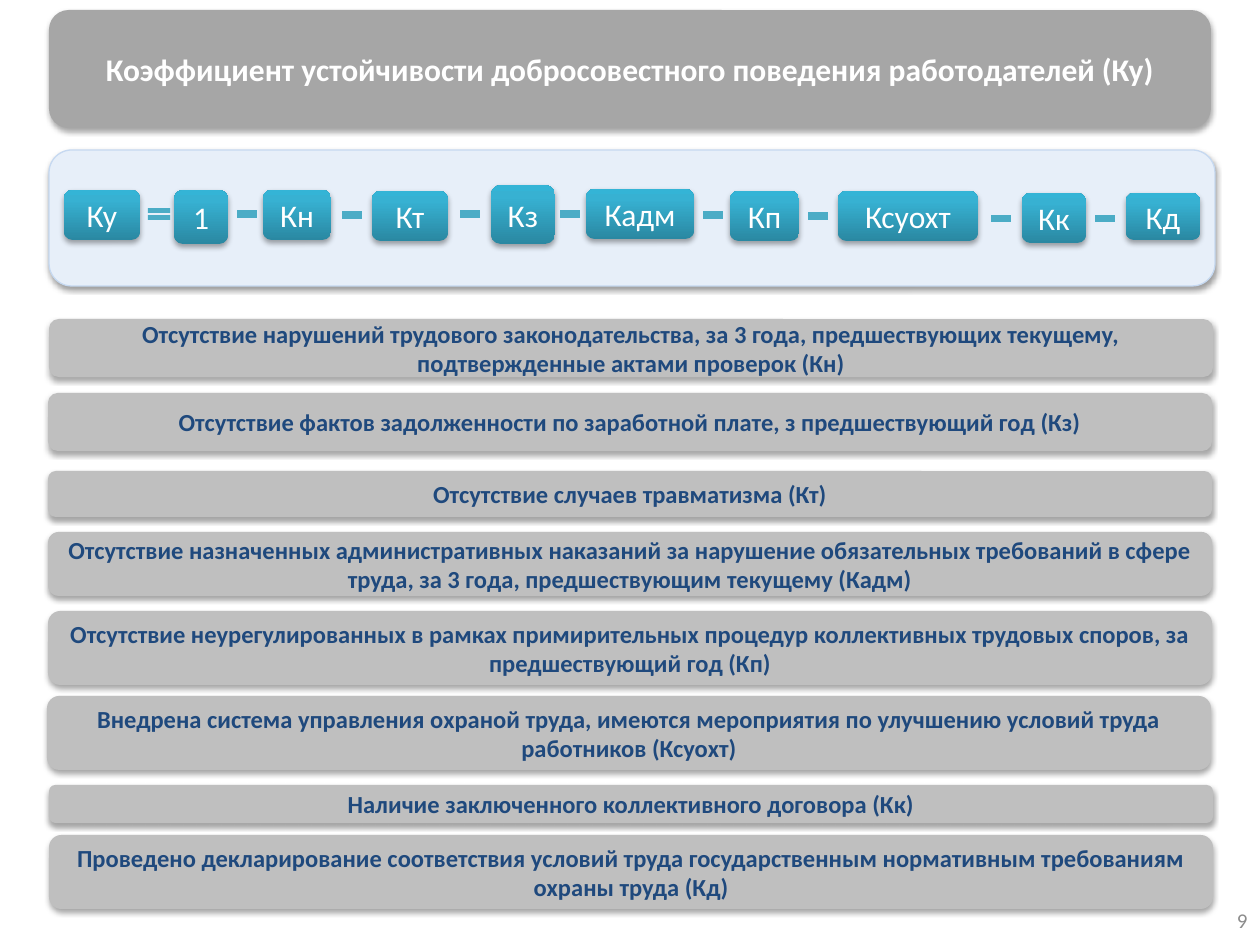
from copy import deepcopy

from lxml import etree
from pptx import Presentation
from pptx import util as u
from pptx.dml.color import RGBColor
from pptx.enum import shapes, text
from pptx.oxml import ns

PX = 914400 / 126
COLORS = {
    "title": "A6A6A6", "panel": "E7EFF9", "panel_line": "C6D9F1",
    "sign": "4BACC6", "bar": "BFBFBF", "bar_text": "1F497D",
    "white": "FFFFFF", "number": "8C8C8C", "shadow": "000000",
}
TILE_STOPS = [(0, "2A88A2"), (0.8, "37B1D2"), (1, "34B4D6")]
RGB = {name: RGBColor.from_string(value) for name, value in COLORS.items()}
KIND = shapes.MSO_SHAPE

prs = Presentation()
prs.slide_width, prs.slide_height = u.Inches(10), u.Inches(7.5)
s = prs.slides.add_slide(prs.slide_layouts[6])


def add_shape(kind, box, color, shadow=None):
    """Add a borderless shape; shadow is (opacity %, distance in EMU)."""
    sp = s.shapes.add_shape(kind, *(round(v * PX) for v in box))
    sp.shadow.inherit = False
    sp.fill.solid()
    sp.fill.fore_color.rgb = RGB[color]
    sp.line.fill.background()
    if shadow:
        opacity, distance = shadow
        effects = sp._element.spPr.find(ns.qn("a:effectLst"))
        outer = etree.SubElement(effects, ns.qn("a:outerShdw"), blurRad="40000",
                                 dist=str(distance), dir="5400000", rotWithShape="0")
        clr = etree.SubElement(outer, ns.qn("a:srgbClr"), val=COLORS["shadow"])
        etree.SubElement(clr, ns.qn("a:alpha"), val=str(opacity * 1000))
    return sp


def write(sp, words, align="CENTER", **font):
    tf = sp.text_frame
    tf.word_wrap = True
    tf.vertical_anchor = text.MSO_ANCHOR.MIDDLE
    p = tf.paragraphs[0]
    p.alignment = text.PP_ALIGN[align]
    r = p.add_run()
    r.text = words
    r.font.color.rgb = RGB[font.pop("color")]
    for name, value in {"name": "Calibri", **font}.items():
        setattr(r.font, name, value)


SHADOW = (35, 23000)

# Formula panel and title
panel = add_shape(KIND.ROUNDED_RECTANGLE, (49, 150, 1166, 136), "panel", (38, 20000))
panel.line.color.rgb = RGB["panel_line"]
panel.line.width = u.Pt(0.75)

title = add_shape(KIND.ROUNDED_RECTANGLE, (49, 10, 1162, 118), "title", SHADOW)
write(title, "Коэффициент устойчивости добросовестного поведения работодателей (Ку)",
      size=u.Pt(18), bold=True, color="white")

# Formula terms
terms = [
    ("Ку", 64, 190, 76, 50), ("1", 174, 190, 54, 54), ("Кн", 263, 190, 68, 50),
    ("Кт", 372, 191, 76, 50), ("Кз", 491, 185, 64, 59), ("Кадм", 586, 189, 108, 50),
    ("Кп", 730, 191, 69, 50), ("Ксуохт", 838, 191, 140, 50), ("Кк", 1022, 193, 64, 50),
    ("Кд", 1126, 193, 74, 47),
]
for words, *box in terms:
    tile = add_shape(KIND.ROUNDED_RECTANGLE, box, "sign", SHADOW)
    tile.fill.gradient()
    tile.fill.gradient_angle = 90
    stop_list = tile._element.spPr.find(".//" + ns.qn("a:gsLst"))
    stop_list.append(deepcopy(stop_list[-1]))
    for stop, (position, color) in zip(tile.fill.gradient_stops, TILE_STOPS):
        stop.position = position
        stop.color.rgb = RGBColor.from_string(color)
    write(tile, words, size=u.Pt(18), color="white")

# Signs between the terms
add_shape(KIND.MATH_EQUAL, (144, 204, 30, 20), "sign")
for x, y in [(233, 199), (338, 200), (456, 199), (556, 199),
             (699, 200), (804, 201), (987, 204), (1091, 204)]:
    add_shape(KIND.MATH_MINUS, (x, y, 28, 30), "sign")

# Criteria: left, top, height, wording
criteria = [
    (49, 319, 58, "Отсутствие нарушений трудового законодательства, за 3 года, "
                  "предшествующих текущему, подтвержденные актами проверок (Кн)"),
    (48, 393, 58, "Отсутствие фактов задолженности по заработной плате, "
                  "з предшествующий год (Кз)"),
    (48, 471, 46, "Отсутствие случаев травматизма (Кт)"),
    (48, 532, 64, "Отсутствие назначенных административных наказаний за нарушение "
                  "обязательных требований в сфере труда, за 3 года, "
                  "предшествующим текущему (Кадм)"),
    (48, 611, 74, "Отсутствие неурегулированных в рамках примирительных процедур "
                  "коллективных трудовых споров, за предшествующий год (Кп)"),
    (47, 696, 74, "Внедрена система управления охраной труда, имеются мероприятия "
                  "по улучшению условий труда работников (Ксуохт)"),
    (49, 785, 38, "Наличие заключенного коллективного договора (Кк)"),
    (49, 835, 74, "Проведено декларирование соответствия условий труда "
                  "государственным нормативным требованиям охраны труда (Кд)"),
]
for x, y, height, words in criteria:
    bar = add_shape(KIND.ROUNDED_RECTANGLE, (x, y, 1164, height), "bar", SHADOW)
    write(bar, words, size=u.Pt(14), bold=True, color="bar_text")

# Slide number
number = s.shapes.add_textbox(*(round(v * PX) for v in (1188, 895, 72, 50)))
write(number, "9", "RIGHT", size=u.Pt(12), color="number")

prs.save("out.pptx")
